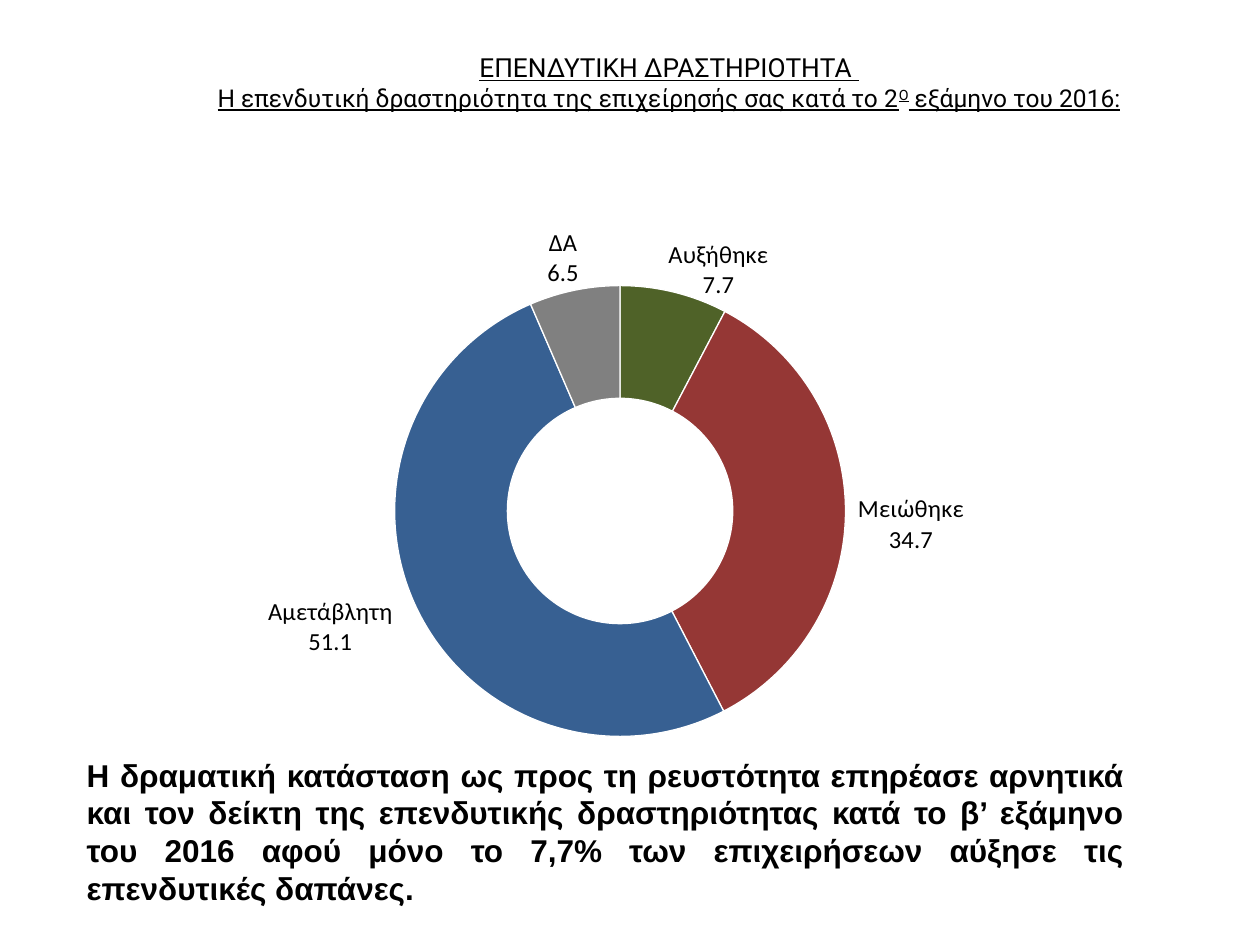
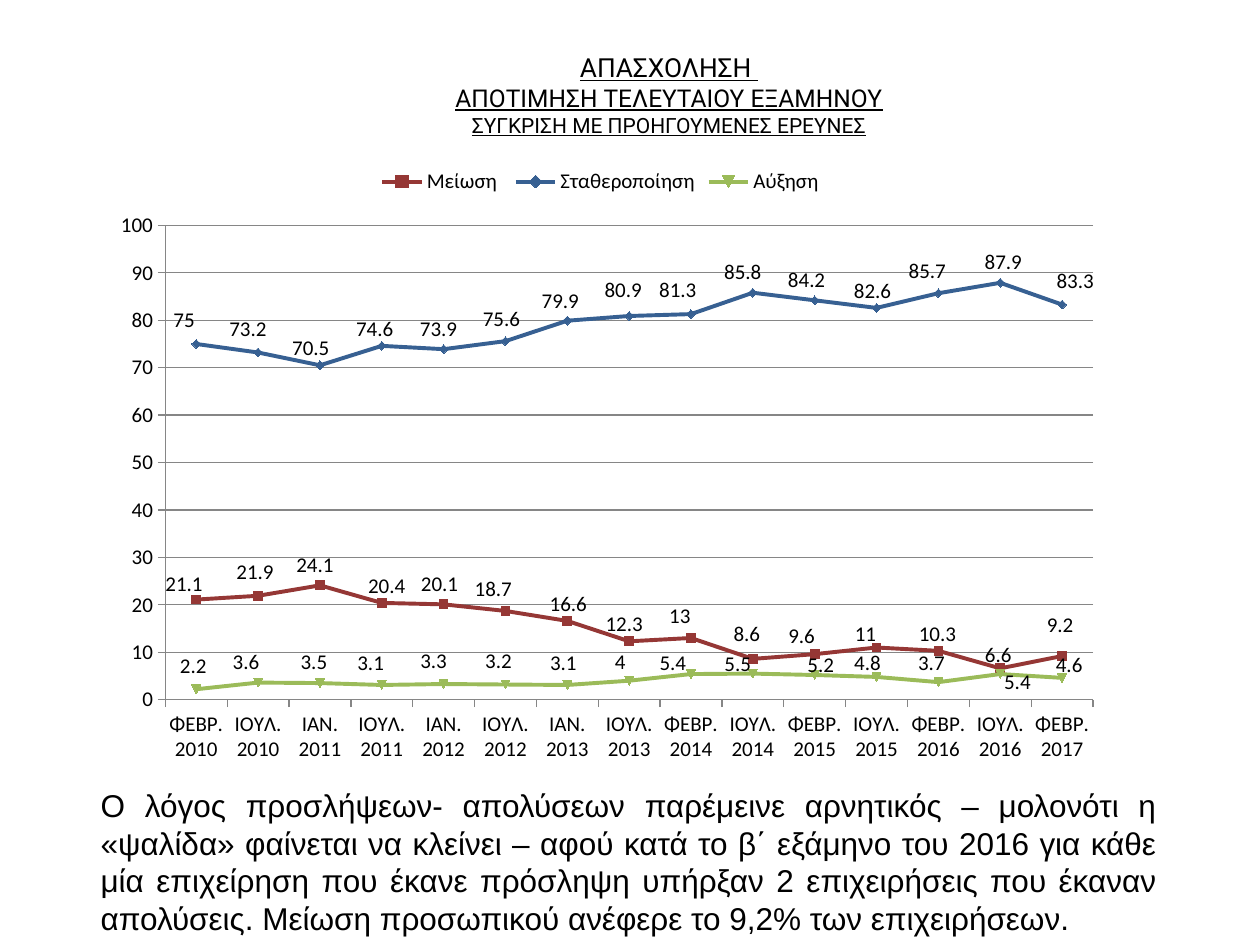
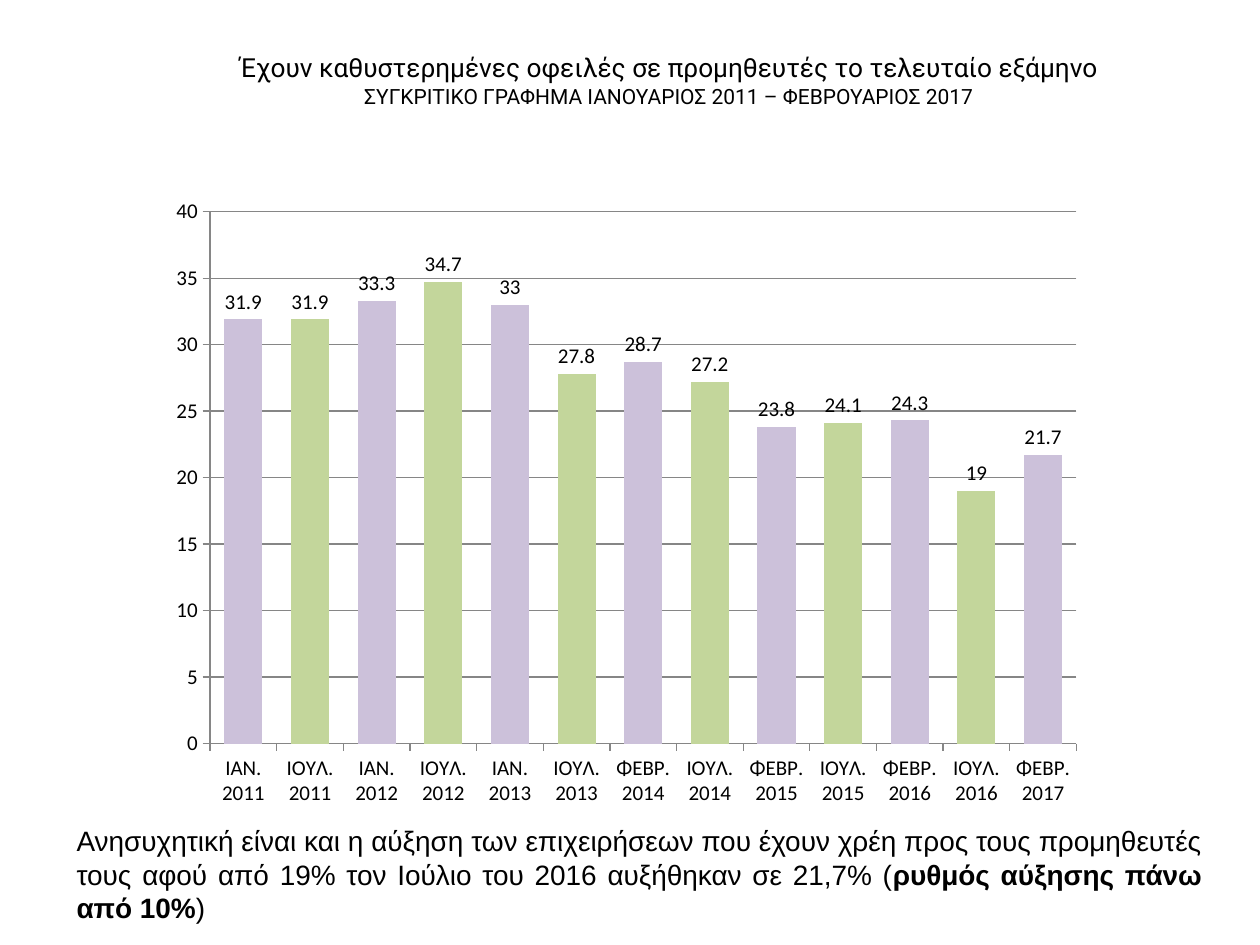
from lxml import etree
from pptx import Presentation
from pptx.chart.data import CategoryChartData
from pptx.dml.color import RGBColor
from pptx.enum.chart import (XL_CHART_TYPE, XL_LABEL_POSITION, XL_LEGEND_POSITION,
                             XL_MARKER_STYLE, XL_TICK_MARK)
from pptx.enum.text import MSO_ANCHOR, MSO_AUTO_SIZE, PP_ALIGN
from pptx.oxml.ns import qn
from pptx.util import Inches, Pt

BLACK, WHITE, GREY = "000000", "FFFFFF", "868686"
RED, BLUE, GREEN = "953735", "376092", "9BBB59"
OLIVE, SILVER, LILAC, PALE_GREEN = "4F6228", "808080", "CCC1DA", "C3D69B"


def rgb(value):
    return RGBColor.from_string(value)


def layout_xml(**values):
    """Manual chart layout; values are shares of the chart's size."""
    layout = etree.Element(qn("c:layout"))
    manual = etree.SubElement(layout, qn("c:manualLayout"))
    for tag, value in values.items():
        etree.SubElement(manual, qn(f"c:{tag}")).set("val", str(value))
    return layout


class Deck:
    title_font, body_font, chart_font = "Roboto", "Arial", "Calibri"
    title_box = (12.5, 4.8, 81.2, 7.2)

    def __init__(self):
        self.prs = Presentation()
        self.prs.slide_width, self.prs.slide_height = Inches(10), Inches(7.5)
        self.s = None

    def place(self, box):
        """Turn percentages of the slide into left, top, width, height."""
        w, h = self.prs.slide_width, self.prs.slide_height
        return [int(share * side / 100) for share, side in zip(box, (w, h, w, h))]

    def slide(self, lines, underline=False):
        """Start a slide; each title line is (size, run, ...), with odd runs raised."""
        self.s = self.prs.slides.add_slide(self.prs.slide_layouts[5])
        sp = self.s.shapes.title
        sp.left, sp.top, sp.width, sp.height = self.place(self.title_box)
        tf = sp.text_frame
        tf.vertical_anchor, tf.auto_size = MSO_ANCHOR.TOP, MSO_AUTO_SIZE.NONE
        p = tf.paragraphs[0]
        p.alignment = PP_ALIGN.CENTER
        p.font.name, p.font.color.rgb, p.font.underline = self.title_font, rgb(BLACK), underline
        for number, (size, *runs) in enumerate(lines):
            if number:
                p.add_line_break()
            for i, text in enumerate(runs):
                r = p.add_run()
                r.text, r.font.size = text, Pt(size)
                if i % 2:
                    r.font._element.set("baseline", "30000")

    def comment(self, box, size, *runs, bold=False):
        """Justified text; every second run is bold."""
        tf = self.s.shapes.add_textbox(*self.place(box)).text_frame
        tf.word_wrap, tf.auto_size = True, MSO_AUTO_SIZE.SHAPE_TO_FIT_TEXT
        p = tf.paragraphs[0]
        p.alignment = PP_ALIGN.JUSTIFY
        p.font.name, p.font.size, p.font.color.rgb = self.body_font, Pt(size), rgb(BLACK)
        p.font.bold = bold
        for i, text in enumerate(runs):
            r = p.add_run()
            r.text = text
            if i % 2:
                r.font.bold = True

    def style(self, font, size):
        font.name, font.size, font.color.rgb = self.chart_font, Pt(size), rgb(BLACK)

    def chart(self, kind, box, plot, cats, series, size=12):
        data = CategoryChartData()
        data.categories = cats
        for name, values in series:
            data.add_series(name, values)
        chart = self.s.shapes.add_chart(kind, *self.place(box), data).chart
        chart.has_title = chart.has_legend = False
        self.style(chart.font, size)
        chart.plots[0].vary_by_categories = False
        area = chart.element.xpath(".//c:plotArea")[0]
        for old in area.xpath("./c:layout"):
            area.remove(old)
        area.insert(0, layout_xml(layoutTarget="inner", xMode="edge", yMode="edge",
                                  **dict(zip("xywh", plot))))
        return chart

    def axes(self, chart, top, step):
        value, category = chart.value_axis, chart.category_axis
        value.minimum_scale, value.maximum_scale, value.major_unit = 0, top, step
        value.has_major_gridlines = True
        for axis in (value, category):
            axis.major_tick_mark = XL_TICK_MARK.OUTSIDE
            self.style(axis.tick_labels.font, 12)
        for fmt in (value.format, category.format, value.major_gridlines.format):
            fmt.line.color.rgb, fmt.line.width = rgb(GREY), Pt(0.75)

    def labels(self, series, size, position=None):
        dl = series.data_labels
        dl.show_value = True
        if position is not None:
            dl.position = position
        self.style(dl.font, size)
        for lead in dl._element.xpath("./c:showLeaderLines"):
            lead.set("val", "0")
        return dl

    def nudge_label(self, series, i, size, dx, dy, position=None):
        """Move one point's label by thousandths of the chart's size."""
        label = series.points[i].data_label
        self.style(label.font, size)
        if position is not None:
            label.position = position
        dlbl = series.data_labels._element.xpath(f"./c:dLbl[c:idx/@val='{i}']")[0]
        dlbl[0].addnext(layout_xml(x=dx / 1000, y=dy / 1000))
        return dlbl


def investment(deck):
    deck.slide([(15, "ΕΠΕΝΔΥΤΙΚΗ ΔΡΑΣΤΗΡΙΟΤΗΤΑ "),
                (14, "Η επενδυτική δραστηριότητα της επιχείρησής σας κατά το 2", "Ο",
                 " εξάμηνο του 2016:")], underline=True)
    chart = deck.chart(XL_CHART_TYPE.DOUGHNUT, (16.7, 20.4, 66.7, 59.2),
                       (0.219, 0.166, 0.537, 0.806),
                       ["Αυξήθηκε", "Μειώθηκε", "Αμετάβλητη", "ΔΑ"],
                       [("Series 1", [7.7, 34.7, 51.1, 6.5])], size=14)
    series = chart.plots[0].series[0]
    dl = deck.labels(series, 14)
    dl.show_category_name = True
    dl.number_format, dl.number_format_is_linked = "0.0", False
    nudges = [(69, -138), (145, 23), (-163, 78), (-27, -156)]
    for i, (color, nudge) in enumerate(zip([OLIVE, RED, BLUE, SILVER], nudges)):
        fmt = series.points[i].format
        fmt.fill.solid()
        fmt.fill.fore_color.rgb = rgb(color)
        fmt.line.color.rgb, fmt.line.width = rgb(WHITE), Pt(0.75)
        dlbl = deck.nudge_label(series, i, 14, *nudge)
        dlbl.xpath("./c:showCatName")[0].set("val", "1")
        etree.SubElement(dlbl, qn("c:separator")).text = "\n"
    deck.comment((5.9, 79.3, 84.3, 17.5), 18,
                 "Η δραματική κατάσταση ως προς τη ρευστότητα επηρέασε αρνητικά και τον δείκτη "
                 "της επενδυτικής δραστηριότητας κατά το β’ εξάμηνο του 2016 αφού μόνο το 7,7% "
                 "των επιχειρήσεων αύξησε τις επενδυτικές δαπάνες.", bold=True)


def employment(deck):
    deck.slide([(15, "ΑΠΑΣΧΟΛΗΣΗ "), (14, "ΑΠΟΤΙΜΗΣΗ ΤΕΛΕΥΤΑΙΟΥ ΕΞΑΜΗΝΟΥ"),
                (12, "ΣΥΓΚΡΙΣΗ ΜΕ ΠΡΟΗΓΟΥΜΕΝΕΣ ΕΡΕΥΝΕΣ")], underline=True)
    first = ["ΦΕΒΡ.", "ΙΑΝ.", "ΙΑΝ.", "ΙΑΝ.", "ΦΕΒΡ.", "ΦΕΒΡ.", "ΦΕΒΡ."]
    cats = [f"{month} {2010 + i}" for i, start in enumerate(first) for month in (start, "ΙΟΥΛ.")]
    lines = [
        ("Μείωση ", [21.1, 21.9, 24.1, 20.4, 20.1, 18.7, 16.6, 12.3, 13, 8.6, 9.6, 11, 10.3,
                     6.6, 9.2]),
        ("Σταθεροποίηση", [75, 73.2, 70.5, 74.6, 73.9, 75.6, 79.9, 80.9, 81.3, 85.8, 84.2,
                           82.6, 85.7, 87.9, 83.3]),
        ("Αύξηση", [2.2, 3.6, 3.5, 3.1, 3.3, 3.2, 3.1, 4, 5.4, 5.5, 5.2, 4.8, 3.7, 5.4, 4.6])]
    nudges = [
        ([-12, -3, -5, 5, -4, -12, 1, -5, -11, -6, -13, -11, -1, -2, -2],
         [11, -2, 2, 8, 3, 0, 8, 8, 0, -5, 6, 14, 8, 14, -14]),
        ([-12, -10, -9, -7, -5, -4, -7, -6, -13, -10, -8, -4, -11, 3, 13],
         [-3, -3, 8, 8, 3, 0, 3, -6, -3, 2, 3, 8, 0, 2, -2]),
        ([-3, -12, -6, -11, -10, -7, -4, -9, -18, -15, 6, -9, -7, 17, 7],
         [-2, 3, 2, 0, -2, -2, 0, 6, 17, 19, 19, 13, 5, 47, 14])]
    chart = deck.chart(XL_CHART_TYPE.LINE_MARKERS, (7.5, 16.4, 80.3, 67.2),
                       (0.07, 0.111, 0.917, 0.747), cats + ["ΦΕΒΡ. 2017"], lines)
    deck.axes(chart, 100, 10)
    chart.has_legend = True
    chart.legend.position, chart.legend.include_in_layout = XL_LEGEND_POSITION.TOP, False
    deck.style(chart.legend.font, 12)
    above = XL_LABEL_POSITION.ABOVE
    for series, color, (across, down) in zip(chart.plots[0].series, [RED, BLUE, GREEN], nudges):
        series.smooth = False
        series.format.line.color.rgb, series.format.line.width = rgb(color), Pt(2.25)
        marker = series.marker
        marker.style, marker.size = XL_MARKER_STYLE.AUTOMATIC, 5
        marker.format.fill.solid()
        marker.format.fill.fore_color.rgb = marker.format.line.color.rgb = rgb(color)
        deck.labels(series, 12, above)
        for i, (dx, dy) in enumerate(zip(across, down)):
            deck.nudge_label(series, i, 12, dx, dy, above)
    deck.comment((7, 82.5, 85.8, 17.5), 18,
                 "Ο λόγος προσλήψεων- απολύσεων παρέμεινε αρνητικός – μολονότι η «ψαλίδα» "
                 "φαίνεται να κλείνει – αφού κατά το β΄ εξάμηνο του 2016 για κάθε μία επιχείρηση "
                 "που έκανε πρόσληψη υπήρξαν 2 επιχειρήσεις που έκαναν απολύσεις. Μείωση "
                 "προσωπικού ανέφερε το 9,2% των επιχειρήσεων.")


def overdue_debts(deck):
    deck.slide([(15, "Έχουν καθυστερημένες οφειλές σε προμηθευτές το τελευταίο εξάμηνο"),
                (12, "ΣΥΓΚΡΙΤΙΚΟ ΓΡΑΦΗΜΑ ΙΑΝΟΥΑΡΙΟΣ 2011 – ΦΕΒΡΟΥΑΡΙΟΣ 2017")])
    first = ["ΙΑΝ.", "ΙΑΝ.", "ΙΑΝ.", "ΦΕΒΡ.", "ΦΕΒΡ.", "ΦΕΒΡ."]
    cats = [f"{month} {2011 + i}" for i, start in enumerate(first) for month in (start, "ΙΟΥΛ.")]
    values = [31.9, 31.9, 33.3, 34.7, 33, 27.8, 28.7, 27.2, 23.8, 24.1, 24.3, 19, 21.7]
    chart = deck.chart(XL_CHART_TYPE.COLUMN_CLUSTERED, (12.5, 19.73, 74.5, 66.93),
                       (0.056, 0.04, 0.923, 0.841), cats + ["ΦΕΒΡ. 2017"],
                       [("Series 1", values)])
    deck.axes(chart, 40, 5)
    plot = chart.plots[0]
    plot.gap_width = 75
    series = plot.series[0]
    deck.labels(series, 12, XL_LABEL_POSITION.OUTSIDE_END)
    series.format.fill.solid()
    series.format.fill.fore_color.rgb = rgb(PALE_GREEN)
    for i in range(0, len(values), 2):
        fill = series.points[i].format.fill
        fill.solid()
        fill.fore_color.rgb = rgb(LILAC)
    deck.comment((5.1, 86.5, 91.3, 12.1), 16,
                 "Ανησυχητική είναι και η αύξηση των επιχειρήσεων που έχουν χρέη προς τους "
                 "προμηθευτές τους αφού από 19% τον Ιούλιο του 2016 αυξήθηκαν σε 21,7% (",
                 "ρυθμός αύξησης πάνω από 10%", ")")


def main():
    deck = Deck()
    for build in (investment, employment, overdue_debts):
        build(deck)
    deck.prs.save("out.pptx")


if __name__ == "__main__":
    main()
